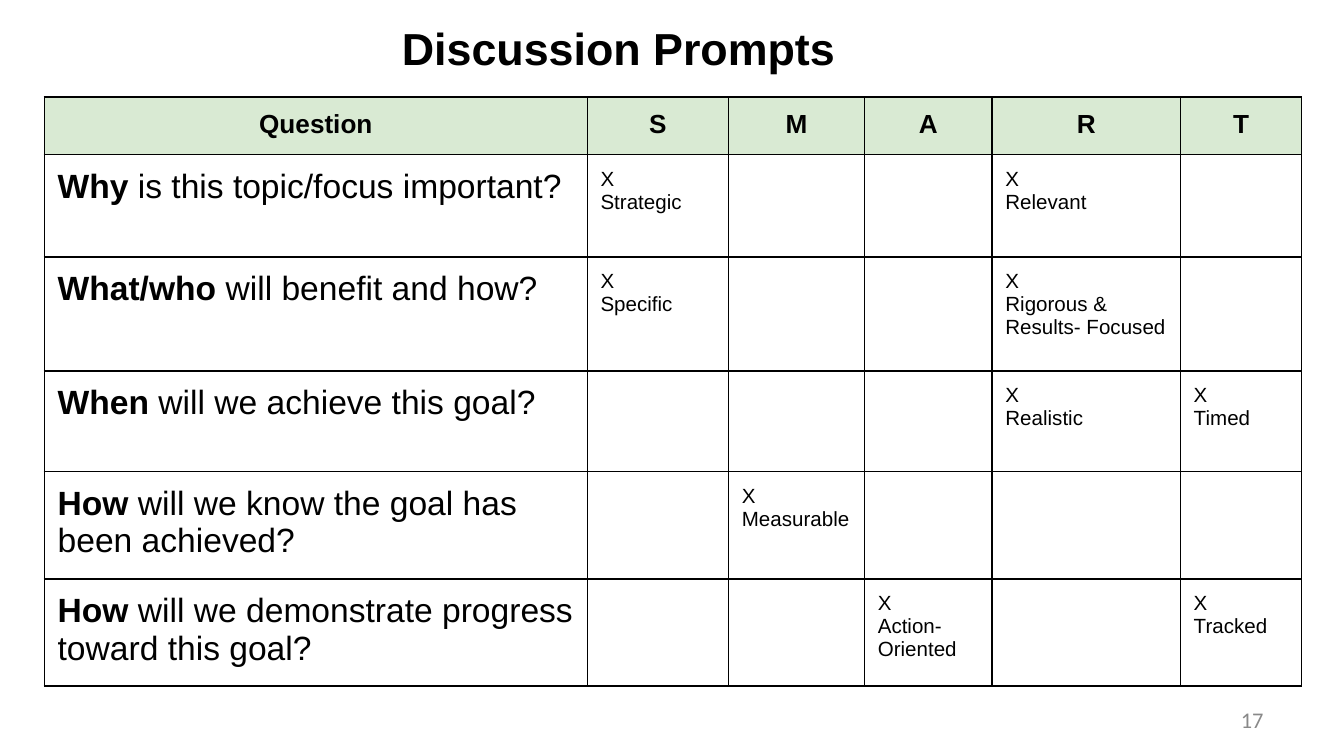
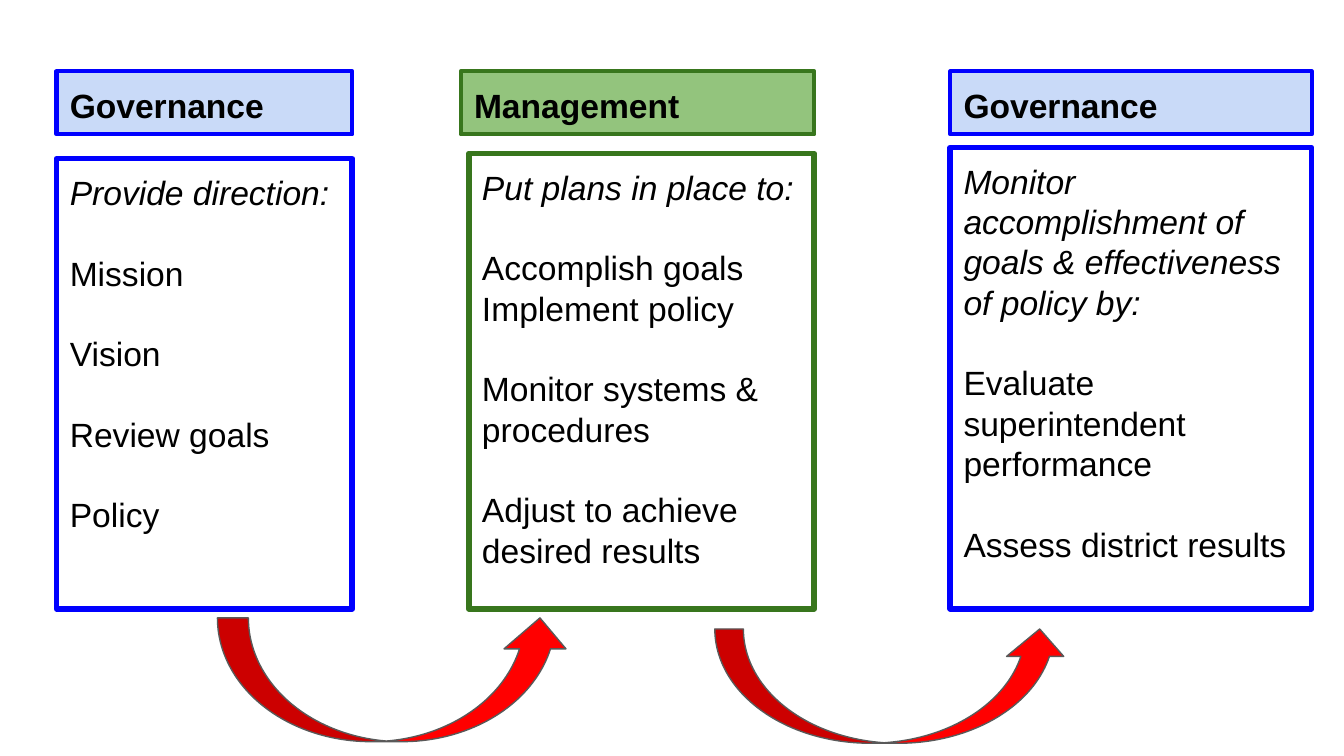
import pptx
import pptx.util
import pptx.dml.color
import pptx.enum.shapes
import pptx.enum.text
import pptx.oxml
import pptx.oxml.ns

Cm, Pt = pptx.util.Cm, pptx.util.Pt
RGB = pptx.dml.color.RGBColor
SHAPE = pptx.enum.shapes.MSO_SHAPE
ALIGN = pptx.enum.text.PP_ALIGN
ANCHOR = pptx.enum.text.MSO_ANCHOR

BLACK = RGB(0x00, 0x00, 0x00)
GRAY = RGB(0x89, 0x89, 0x89)
SLATE = RGB(0x59, 0x59, 0x59)
MINT = RGB(0xD9, 0xEA, 0xD3)
BLUE = RGB(0x00, 0x00, 0xFF)
SKY = RGB(0xC9, 0xDA, 0xF8)
GREEN = RGB(0x38, 0x76, 0x1D)
LEAF = RGB(0x93, 0xC4, 0x7D)
RED = RGB(0xFF, 0x00, 0x00)
INSET = Cm(0.25)
PITCH = 21.6


def write(frame, text, size=18, font="Arial", color=BLACK, bold=False,
          italic=False, align=ALIGN.LEFT, before=0, pitch=None, join=False):
    """Add a paragraph, or with join a run in the last paragraph."""
    para = frame.paragraphs[-1]
    if para.runs and not join:
        para = frame.add_paragraph()
    if not join:
        para.alignment = align
        para.space_before = Pt(before)
        if pitch:
            para.line_spacing = Pt(pitch)
    run = para.add_run()
    run.text = text
    run.font.size = Pt(size)
    run.font.name = font
    run.font.bold = bold
    run.font.italic = italic
    run.font.color.rgb = color


def draw(slide, kind, left, top, width, height, fill, line, weight):
    """Add a flat shape whose text starts at the top left."""
    shape = slide.shapes.add_shape(kind, Cm(left), Cm(top), Cm(width), Cm(height))
    shape.shadow.inherit = False
    if fill is None:
        shape.fill.background()
    else:
        shape.fill.solid()
        shape.fill.fore_color.rgb = fill
    shape.line.color.rgb = line
    shape.line.width = Pt(weight)
    frame = shape.text_frame
    frame.word_wrap = True
    frame.vertical_anchor = ANCHOR.TOP
    frame.margin_left = frame.margin_right = INSET
    frame.margin_top = frame.margin_bottom = INSET
    return shape


deck = pptx.Presentation()
deck.slide_width, deck.slide_height = Cm(25.4), Cm(14.29)

# Slide 1: title and page number
slide = deck.slides.add_slide(deck.slide_layouts[5])
title = slide.shapes.title
title.left, title.top, title.width, title.height = Cm(7.34), Cm(-0.3), Cm(18.06), Cm(2.39)
title.text_frame.vertical_anchor = ANCHOR.MIDDLE
write(title.text_frame, "Discussion Prompts", size=24, bold=True)

page = slide.shapes.add_textbox(Cm(18.21), Cm(13.23), Cm(5.92), Cm(0.76)).text_frame
page.word_wrap = True
page.vertical_anchor = ANCHOR.MIDDLE
write(page, "17", size=12, font="Calibri", color=GRAY, align=ALIGN.RIGHT)

# Slide 1: questions against the SMART letters
HEADS = ["Question", "S", "M", "A", "R", "T"]
WIDTHS = [10.26, 2.67, 2.57, 2.41, 3.56, 2.29]
HEIGHTS = [1.09, 1.93, 2.16, 1.9, 1.93, 1.93]
ROWS = [
    ("Why", " is this topic/focus important?",
     {"S": ["Strategic"], "R": ["Relevant"]}),
    ("What/who ", "will benefit and how?",
     {"S": ["Specific"], "R": ["Rigorous &", "Results- Focused"]}),
    ("When ", "will we achieve this goal?",
     {"R": ["Realistic"], "T": ["Timed"]}),
    ("How ", "will we know the goal has been achieved?",
     {"M": ["Measurable"]}),
    ("How ", "will we demonstrate progress toward this goal?",
     {"A": ["Action-", "Oriented"], "T": ["Tracked"]}),
]
grid = slide.shapes.add_table(len(HEIGHTS), len(WIDTHS), Cm(0.84), Cm(1.83),
                              Cm(sum(WIDTHS)), Cm(sum(HEIGHTS))).table
grid.horz_banding = False
for col, width in zip(grid.columns, WIDTHS):
    col.width = Cm(width)
for row, height in zip(grid.rows, HEIGHTS):
    row.height = Cm(height)

# Cell fill, margins and borders
for at, cell in enumerate(grid.iter_cells()):
    cell.margin_left = cell.margin_right = INSET
    cell.margin_top = cell.margin_bottom = INSET
    props = cell._tc.get_or_add_tcPr()
    for side in ("lnL", "lnR", "lnT", "lnB"):
        props.append(pptx.oxml.parse_xml(
            f'<a:{side} {pptx.oxml.ns.nsdecls("a")} w="12700"><a:solidFill>'
            f'<a:srgbClr val="{BLACK}"/></a:solidFill></a:{side}>'))
    if at < len(HEADS):
        cell.fill.solid()
        cell.fill.fore_color.rgb = MINT
    else:
        cell.fill.background()

# Cell text
for at, head in enumerate(HEADS):
    write(grid.cell(0, at).text_frame, head, size=14, bold=True, align=ALIGN.CENTER)
for at, (key, rest, marks) in enumerate(ROWS, 1):
    frame = grid.cell(at, 0).text_frame
    write(frame, key, bold=True, before=4.8 if at > 1 else 0)
    write(frame, rest, join=True)
    for head, words in marks.items():
        for word in ["X"] + words:
            write(grid.cell(at, HEADS.index(head)).text_frame, word, size=11)

# Slide 2: three columns; each inner list is a group set apart by a line
slide = deck.slides.add_slide(deck.slide_layouts[6])
FLOOR = 11.51
COLS = [
    ("Governance", SKY, BLUE, 1.07, 5.59, 1.07, 3.0, 5.59, "Provide direction:",
     [["Mission"], ["Vision"], ["Review goals"], ["Policy"]]),
    ("Management", LEAF, GREEN, 8.71, 6.68, 8.86, 2.9, 6.53, "Put plans in place to:",
     [["Accomplish goals", "Implement policy"], ["Monitor systems & procedures"],
      ["Adjust to achieve desired results"]]),
    ("Governance", SKY, BLUE, 17.96, 6.83, 17.96, 2.79, 6.83,
     "Monitor accomplishment of goals & effectiveness of policy by:",
     [["Evaluate superintendent performance"], ["Assess district results"]]),
]
for head, fill, line, left, width, inner, top, span, lead, groups in COLS:
    box = draw(slide, SHAPE.RECTANGLE, inner, top, span, FLOOR - top, None, line, 3)
    write(box.text_frame, lead, italic=True, pitch=PITCH)
    for group in groups:
        for at, text in enumerate(group):
            write(box.text_frame, text, before=0 if at else PITCH, pitch=PITCH)
    bar = draw(slide, SHAPE.RECTANGLE, left, 1.35, width, 1.19, fill, line, 2.25)
    write(bar.text_frame, head, bold=True, pitch=PITCH)

# Slide 2: arrows from column to column
for left, top, height, tip in [(4.11, 11.68, 2.34, 0.25), (13.51, 11.89, 2.16, 0.24)]:
    arrow = draw(slide, SHAPE.CURVED_UP_ARROW, left, top, 6.68, height, RED, SLATE, 0.75)
    for at, value in enumerate([0.25, 0.5, tip]):
        arrow.adjustments[at] = value

deck.save("out.pptx")
